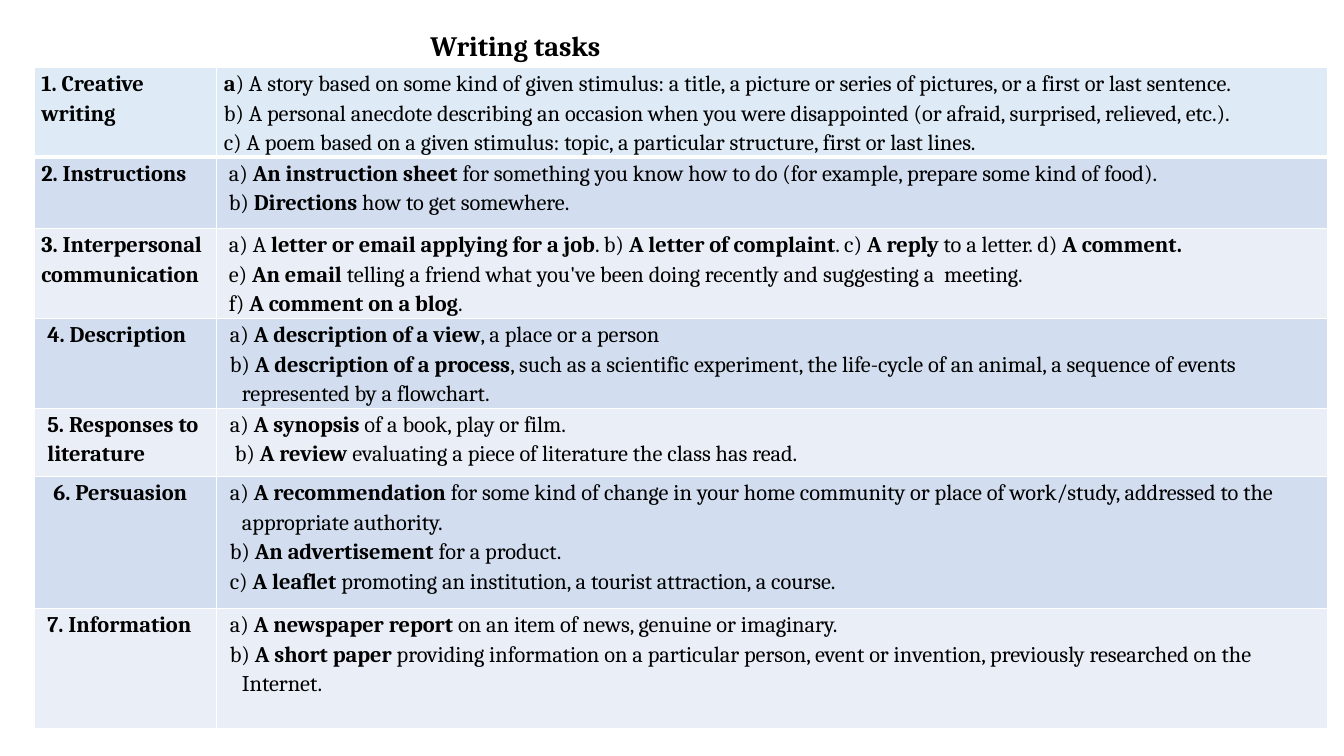
from lxml.etree import SubElement
from pptx import Presentation
from pptx.dml.color import RGBColor
from pptx.oxml import parse_xml
from pptx.oxml.ns import nsdecls
from pptx.util import Inches, Pt

FONT = "Cambria"
TITLE = "Writing tasks"
BLACK, WHITE = "000000", "FFFFFF"
PALE, BLUE, LIGHT = "DEEBF7", "D2DEEF", "EAEFF7"
COLUMN_WIDTHS = [1.81, 11.02]
FLUSH, HANGING = (0, 0), (0.18, -0.12)

# Each task: height, fill, heading with its (left, first line) indent, then lines with theirs.
TASKS = [
    (0.89, PALE, ("**1. Creative writing**", FLUSH), [
        ("**a**) A story based on some kind of given stimulus: a title, a picture or series of pictures, or a first or last sentence.", FLUSH),
        ("b) A personal anecdote describing an occasion when you were disappointed (or afraid, surprised, relieved, etc.).", FLUSH),
        ("c) A poem based on a given stimulus: topic, a particular structure, first or last lines.", FLUSH)]),
    (0.71, BLUE, ("**2. Instructions**", (0.12, -0.12)), [
        ("a) **An instruction sheet** for something you know how to do (for example, prepare some kind of food).", (0.05, 0)),
        ("b) **Directions** how to get somewhere.", (0.05, 0))]),
    (0.89, LIGHT, ("**3. Interpersonal communication**", FLUSH), [
        ("a) A **letter or email applying for a job**. b) **A letter of complaint**. c) **A reply** to a letter. d) **A comment.**", (0.5, -0.45)),
        ("e) **An email** telling a friend what you've been doing recently and suggesting a  meeting.", (0.5, -0.45)),
        ("f) **A comment on a blog**.", (0.5, -0.45))]),
    (0.89, BLUE, ("**4. Description**", (0.5, -0.44)), [
        ("a) **A description of a view**, a place or a person", HANGING),
        ("b) **A description of a process**, such as a scientific experiment, the life-cycle of an animal, a sequence of events represented by a flowchart.", HANGING)]),
    (0.68, LIGHT, ("**5. Responses to literature**", (0.06, 0)), [
        ("a) **A synopsis** of a book, play or film.", HANGING),
        ("b) **A review** evaluating a piece of literature the class has read.", (0.18, -0.07))]),
    (1.31, BLUE, ("**6. Persuasion**", (0.5, -0.38)), [
        ("a) **A recommendation** for some kind of change in your home community or place of work/study, addressed to the appropriate authority.", HANGING),
        ("b) **An advertisement** for a product.", HANGING),
        ("c) **A leaflet** promoting an institution, a tourist attraction, a course.", HANGING)]),
    (1.19, LIGHT, ("**7. Information**", (0.5, -0.44)), [
        ("a) **A newspaper report** on an item of news, genuine or imaginary.", HANGING),
        ("b) **A short paper** providing information on a particular person, event or invention, previously researched on the Internet.", HANGING)]),
]


def color(value):
    return RGBColor.from_string(value)


def style_span(span, size, bold):
    span.font.name = FONT
    span.font.size = Pt(size)
    span.font.bold = bold
    span.font.color.rgb = color(BLACK)


def write_lines(frame, lines):
    for index, (text, (left, first)) in enumerate(lines):
        para = frame.paragraphs[0] if index == 0 else frame.add_paragraph()
        para.line_spacing = 1.15
        properties = para._p.get_or_add_pPr()
        properties.set("marL", str(Inches(left)))
        properties.set("indent", str(Inches(first)))
        for part, words in enumerate(text.split("**")):
            if words:
                span = para.add_run()
                span.text = words
                style_span(span, 16, part % 2 == 1)


def add_borders(cell, top, bottom):
    properties = cell._tc.get_or_add_tcPr()
    for index, (side, width) in enumerate([("L", 1), ("R", 1), ("T", top), ("B", bottom)]):
        properties.insert(index, parse_xml(
            f'<a:ln{side} {nsdecls("a")} w="{Pt(width)}"><a:solidFill>'
            f'<a:srgbClr val="{WHITE}"/></a:solidFill></a:ln{side}>'))


def fill_cell(cell, fill, lines, top, bottom):
    cell.margin_left = cell.margin_right = Inches(0.07)
    cell.margin_top = cell.margin_bottom = 0
    cell.fill.solid()
    cell.fill.fore_color.rgb = color(fill)
    add_borders(cell, top, bottom)
    write_lines(cell.text_frame, lines)


def add_tasks(page):
    height = sum(task[0] for task in TASKS)
    table = page.shapes.add_table(
        len(TASKS), 2, Inches(0.34), Inches(0.67),
        Inches(sum(COLUMN_WIDTHS)), Inches(height)).table
    table.first_row = table.horz_banding = False
    for column, width in zip(table.columns, COLUMN_WIDTHS):
        column.width = Inches(width)
    for index, (height, fill, heading, lines) in enumerate(TASKS):
        table.rows[index].height = Inches(height)
        top, bottom = (3 if index == 1 else 1), (3 if index == 0 else 1)
        fill_cell(table.cell(index, 0), fill, [heading], top, bottom)
        fill_cell(table.cell(index, 1), fill, lines, top, bottom)


def add_title(page):
    box = page.shapes.add_textbox(Inches(4.17), Inches(0.23), Inches(3.92), Inches(0.44))
    box.text_frame.word_wrap = True
    box.text_frame.text = TITLE
    style_span(box.text_frame.paragraphs[0].runs[0], 20, True)


def main():
    deck = Presentation()
    deck.slide_width, deck.slide_height = Inches(13.33), Inches(7.5)
    page = deck.slides.add_slide(deck.slide_layouts[6])
    add_tasks(page)
    add_title(page)
    deck.save("out.pptx")


if __name__ == "__main__":
    main()
